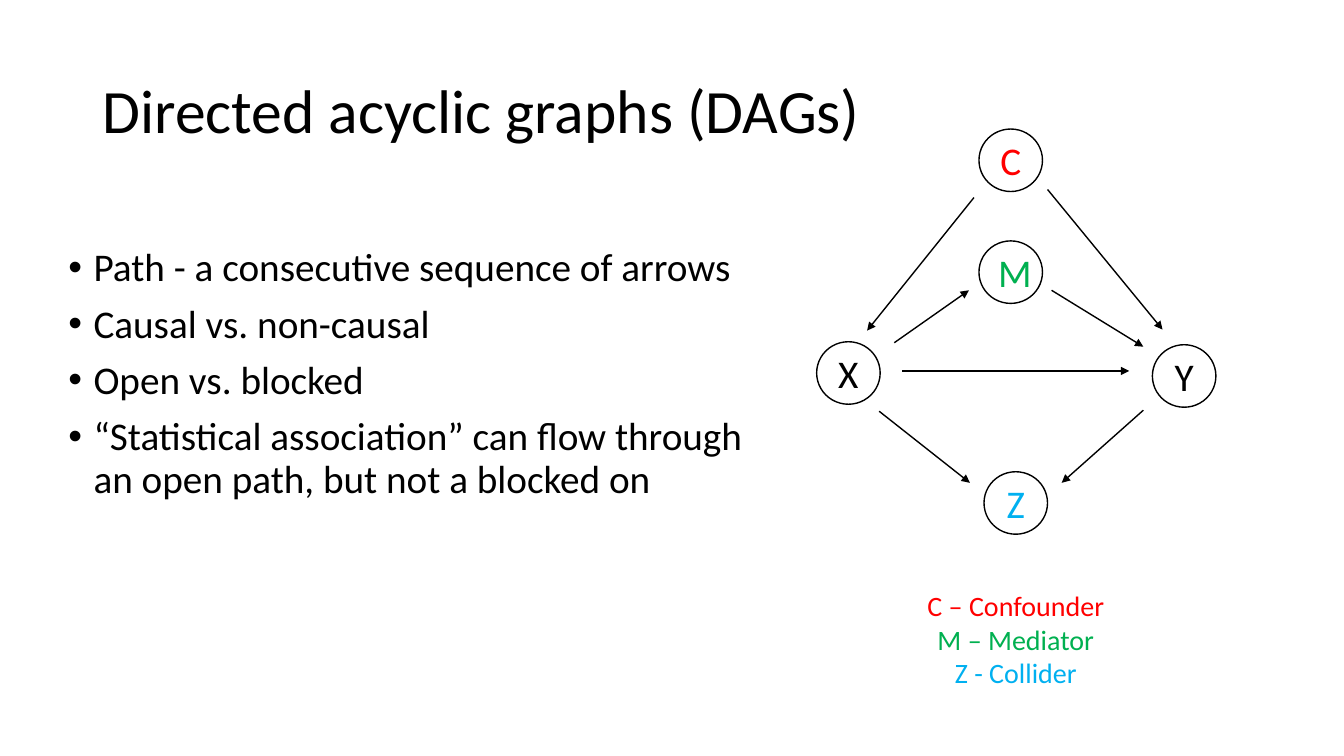
from dataclasses import dataclass

from lxml.etree import SubElement
from pptx import Presentation
from pptx.dml.color import RGBColor
from pptx.enum.shapes import MSO_CONNECTOR, MSO_SHAPE
from pptx.enum.text import MSO_ANCHOR, PP_ALIGN
from pptx.oxml.ns import qn
from pptx.slide import Slide
from pptx.text.text import TextFrame, _Paragraph
from pptx.util import Inches, Pt


@dataclass(frozen=True)
class Theme:
    font: str = "Calibri"
    black: str = "000000"
    confounder: str = "FF0000"
    mediator: str = "00B050"
    collider: str = "00B0F0"
    title: int = 44
    body: int = 28
    legend: int = 20
    line: int = 1


@dataclass(frozen=True)
class Node:
    label: str
    left: float
    top: float
    color: str


@dataclass(frozen=True)
class Arrow:
    x1: float
    y1: float
    x2: float
    y2: float


THEME = Theme()
NODE_WIDTH, NODE_HEIGHT = 0.63, 0.62

BULLETS = [
    "Path - a consecutive sequence of arrows",
    "Causal vs. non-causal",
    "Open vs. blocked",
    "“Statistical association” can flow through an open path, but not a blocked on",
]
NODES = [
    Node("X", 8.1, 3.39, THEME.black),
    Node("Y", 11.43, 3.42, THEME.black),
    Node("M", 9.71, 2.39, THEME.mediator),
    Node("C", 9.71, 1.28, THEME.confounder),
    Node("Z", 9.76, 4.68, THEME.collider),
]
ARROWS = [
    Arrow(8.95, 3.68, 11.2, 3.68),  # X to Y
    Arrow(8.87, 3.4, 9.61, 2.88),  # X to M
    Arrow(10.43, 2.88, 11.34, 3.44),  # M to Y
    Arrow(10.39, 1.88, 11.53, 3.27),  # C to Y
    Arrow(9.66, 1.96, 8.6, 3.28),  # C to X
    Arrow(8.72, 4.08, 9.62, 4.79),  # X to Z
    Arrow(11.34, 4.07, 10.53, 4.79),  # Y to Z
]
LEGEND = [
    ("C – Confounder", THEME.confounder),
    ("M – Mediator", THEME.mediator),
    ("Z - Collider", THEME.collider),
]


def add_run(p: _Paragraph, text: str, size: int, color: str = THEME.black) -> None:
    r = p.add_run()
    r.text = text
    r.font.name = THEME.font
    r.font.size = Pt(size)
    r.font.color.rgb = RGBColor.from_string(color)


def next_paragraph(tf: TextFrame) -> _Paragraph:
    """Return the unused first paragraph, or a new one after it."""
    first = tf.paragraphs[0]
    return tf.add_paragraph() if first.runs else first


def add_text_box(s: Slide, left: float, top: float, width: float, height: float) -> TextFrame:
    sp = s.shapes.add_textbox(Inches(left), Inches(top), Inches(width), Inches(height))
    tf = sp.text_frame
    tf.word_wrap = True
    return tf


def add_title(s: Slide) -> None:
    tf = add_text_box(s, 0.92, 0.4, 11.5, 1.45)
    tf.vertical_anchor = MSO_ANCHOR.MIDDLE
    p = tf.paragraphs[0]
    p.line_spacing = 0.9
    add_run(p, "Directed acyclic graphs (DAGs)", THEME.title)


def add_bullets(s: Slide) -> None:
    tf = add_text_box(s, 0.58, 2.41, 7, 4.04)
    for text in BULLETS:
        p = next_paragraph(tf)
        p.line_spacing = 0.9
        p.space_before = Pt(10)
        pPr = p._p.get_or_add_pPr()
        pPr.set("marL", str(Inches(0.25)))
        pPr.set("indent", str(Inches(-0.25)))
        SubElement(pPr, qn("a:buFont"), typeface="Arial")
        SubElement(pPr, qn("a:buChar"), char="•")
        add_run(p, text, THEME.body)


def add_arrow(s: Slide, arrow: Arrow) -> None:
    ends = (Inches(v) for v in (arrow.x1, arrow.y1, arrow.x2, arrow.y2))
    cxn = s.shapes.add_connector(MSO_CONNECTOR.STRAIGHT, *ends)
    cxn.line.width = Pt(THEME.line)
    cxn.line.color.rgb = RGBColor.from_string(THEME.black)
    SubElement(cxn.line._get_or_add_ln(), qn("a:tailEnd"), type="triangle")
    SubElement(cxn._element.spPr, qn("a:effectLst"))


def add_node(s: Slide, node: Node) -> None:
    sp = s.shapes.add_shape(
        MSO_SHAPE.OVAL, Inches(node.left), Inches(node.top), Inches(NODE_WIDTH), Inches(NODE_HEIGHT)
    )
    sp.shadow.inherit = False
    sp.fill.background()
    sp.line.width = Pt(THEME.line)
    sp.line.color.rgb = RGBColor.from_string(THEME.black)
    tf = sp.text_frame
    tf.vertical_anchor = MSO_ANCHOR.MIDDLE
    p = tf.paragraphs[0]
    p.alignment = PP_ALIGN.CENTER
    add_run(p, node.label, THEME.body, node.color)


def add_legend(s: Slide) -> None:
    tf = add_text_box(s, 8.27, 5.79, 3.61, 1.11)
    for text, color in LEGEND:
        p = next_paragraph(tf)
        p.alignment = PP_ALIGN.CENTER
        add_run(p, text, THEME.legend, color)


def main() -> None:
    prs = Presentation()
    prs.slide_width, prs.slide_height = Inches(13.33), Inches(7.5)
    s = prs.slides.add_slide(prs.slide_layouts[6])
    add_title(s)
    add_bullets(s)
    for arrow in ARROWS:
        add_arrow(s, arrow)
    for node in NODES:
        add_node(s, node)
    add_legend(s)
    prs.save("out.pptx")


if __name__ == "__main__":
    main()
